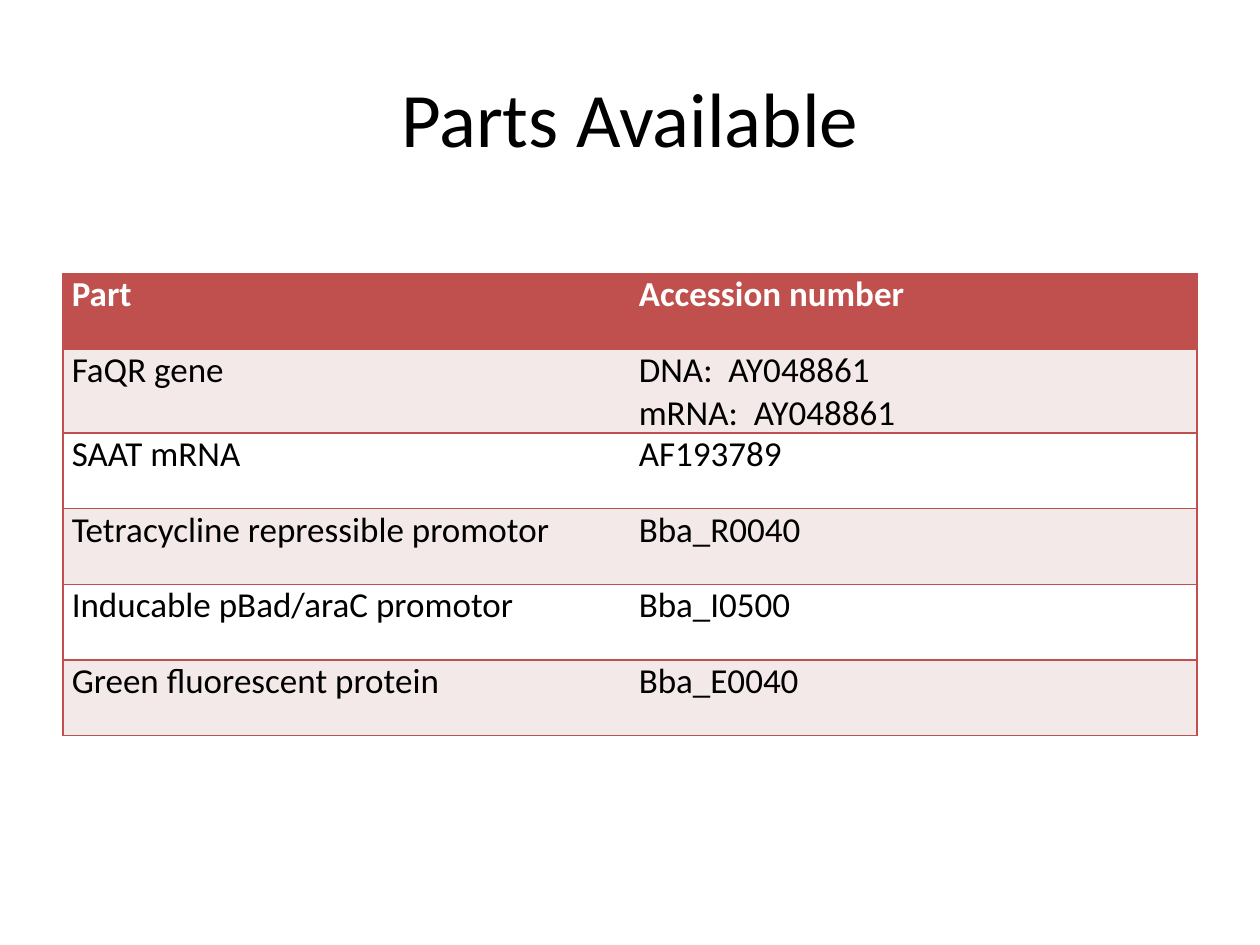
from lxml import etree
from pptx import Presentation
from pptx.dml.color import RGBColor
from pptx.enum.text import MSO_ANCHOR, PP_ALIGN
from pptx.oxml.ns import qn
from pptx.util import Inches, Pt

CENTER = PP_ALIGN.CENTER
LEFT = PP_ALIGN.LEFT
MIDDLE = MSO_ANCHOR.MIDDLE
TOP = MSO_ANCHOR.TOP

PARTS = [
    ("Part", "Accession number"),
    ("FaQR gene", "DNA:  AY048861\nmRNA:  AY048861"),
    ("SAAT mRNA", "AF193789"),
    ("Tetracycline repressible promotor", "Bba_R0040"),
    ("Inducable pBad/araC promotor", "Bba_I0500"),
    ("Green fluorescent protein", "Bba_E0040"),
]


def color(value):
    return RGBColor.from_string(value)


class Deck:
    font = "Calibri"
    ink = "000000"
    white = "FFFFFF"
    accent = "C0504D"
    band = "F4E9E9"

    def __init__(self, prs):
        self.s = prs.slides.add_slide(prs.slide_layouts[6])

    def set_text(self, tf, text, size, fill, bold=False, align=LEFT):
        tf.text = text
        for p in tf.paragraphs:
            p.alignment = align
            p.font.name = self.font
            p.font.size = Pt(size)
            p.font.bold = bold
            p.font.color.rgb = color(fill)

    def title(self, text, x, y, w, h):
        sp = self.s.shapes.add_textbox(Inches(x), Inches(y), Inches(w), Inches(h))
        tf = sp.text_frame
        tf.word_wrap = True
        tf.vertical_anchor = MIDDLE
        self.set_text(tf, text, 44, self.ink, align=CENTER)

    def border(self, cell, side, visible):
        tc_pr = cell._tc.get_or_add_tcPr()
        ln = etree.SubElement(tc_pr, qn(f"a:ln{side}"), w=str(Pt(1)))
        if visible:
            fill = etree.SubElement(ln, qn("a:solidFill"))
            etree.SubElement(fill, qn("a:srgbClr"), val=self.accent)
        else:
            etree.SubElement(ln, qn("a:noFill"))

    def cell(self, cell, text, row, first, last):
        header = row == 0
        cell.margin_left = cell.margin_right = Inches(0.07)
        cell.margin_top = cell.margin_bottom = 0
        cell.vertical_anchor = TOP
        for side, visible in (("L", first), ("R", last), ("T", True), ("B", True)):
            self.border(cell, side, visible)
        cell.fill.solid()
        fill = self.accent if header else self.band if row % 2 else self.white
        cell.fill.fore_color.rgb = color(fill)
        self.set_text(cell.text_frame, text, 20, self.white if header else self.ink, header)

    def table(self, rows, x, y, w, row_h):
        cols = len(rows[0])
        frame = self.s.shapes.add_table(
            len(rows), cols, Inches(x), Inches(y), Inches(w), Inches(row_h * len(rows)))
        table = frame.table
        table.horz_banding = False
        for i, values in enumerate(rows):
            table.rows[i].height = Inches(row_h)
            for j, value in enumerate(values):
                self.cell(table.cell(i, j), value, i, j == 0, j == cols - 1)


def main():
    prs = Presentation()
    prs.slide_width = Inches(10)
    prs.slide_height = Inches(7.5)
    deck = Deck(prs)
    deck.title("Parts Available", 0.5, 0.3, 9, 1.25)
    deck.table(PARTS, 0.5, 2.17, 9, 0.6)
    prs.save("out.pptx")


if __name__ == "__main__":
    main()
